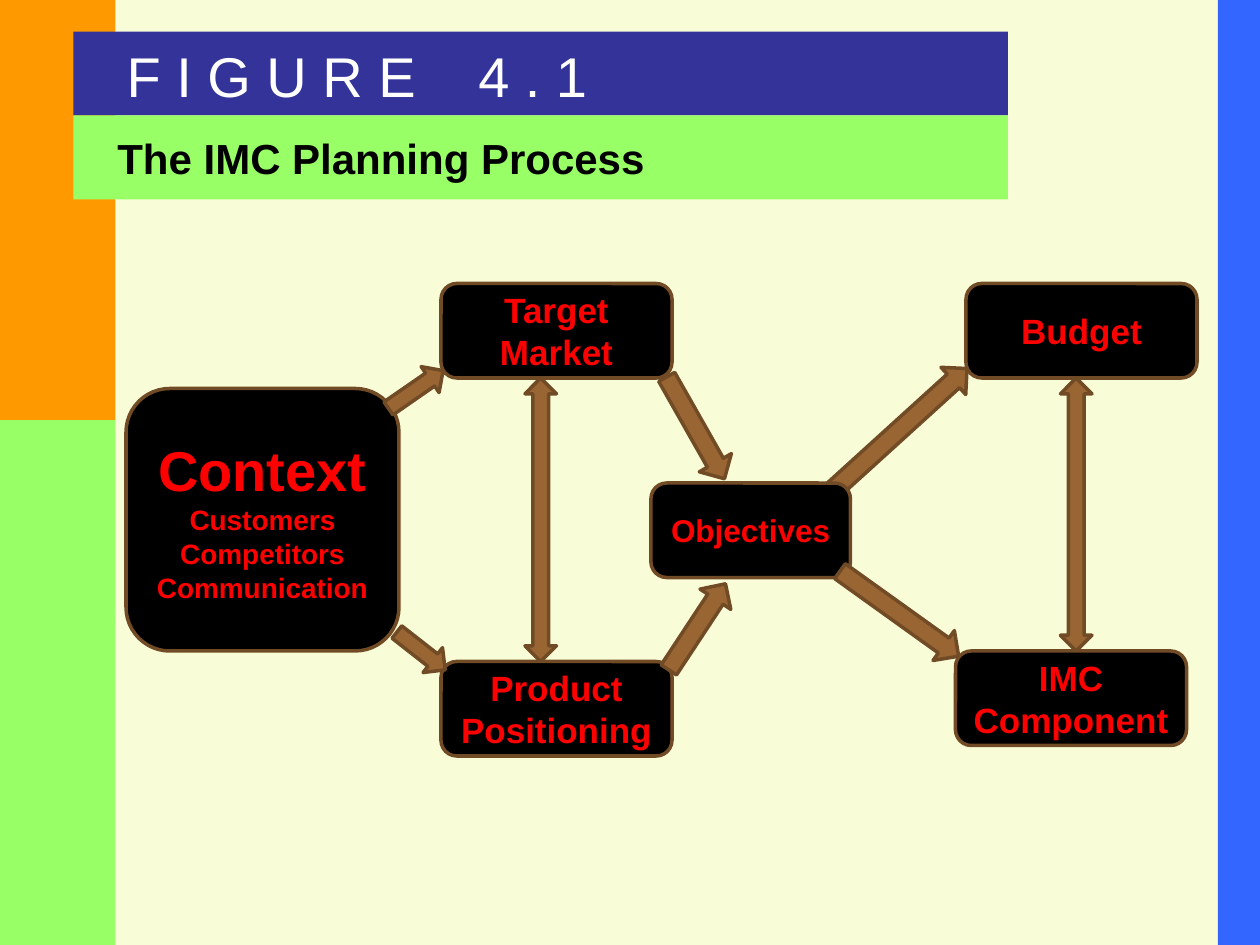
from math import atan2, degrees, hypot
from typing import NamedTuple

from pptx import Presentation
from pptx.dml.color import RGBColor
from pptx.enum.shapes import MSO_SHAPE
from pptx.enum.text import MSO_ANCHOR, PP_ALIGN
from pptx.util import Inches, Pt

COLUMNS, ROWS = 120, 90
WIDTH, HEIGHT = Inches(10), Inches(7.5)
CELL = WIDTH / COLUMNS
GREEN, WHITE, BLACK, RED = "99FF66", "FFFFFF", "000000", "FF0000"
BROWN, DARK_BROWN = "996633", "714B26"


class Area(NamedTuple):
    """A rectangle in columns and rows of the grid."""

    column: float
    row: float
    columns: float
    rows: float


class Line(NamedTuple):
    """One line of text and its size in points."""

    text: str
    size: int


class Stage(NamedTuple):
    """A stage of the planning process."""

    area: Area
    lines: list[Line]


class Arrow(NamedTuple):
    """A block arrow from a start to an end on the grid."""

    start: tuple[float, float]
    end: tuple[float, float]
    thickness: float = 3.5
    kind: MSO_SHAPE = MSO_SHAPE.RIGHT_ARROW


BANDS = [
    (Area(116, 0, 4, ROWS), "3366FF"),
    (Area(0, 0, 11, 40), "FF9900"),
    (Area(0, 40, 11, 50), GREEN),
    (Area(7, 3, 89, 8), "333399"),
    (Area(7, 11, 89, 8), GREEN),
]
OUTER_STAGES = [
    Stage(Area(12, 37, 26, 25), [Line("Context", 32), Line("Customers", 16),
                                 Line("Competitors", 16), Line("Communication", 16)]),
    Stage(Area(92, 27, 22, 9), [Line("Budget", 20)]),
    Stage(Area(42, 27, 22, 9), [Line("Target", 20), Line("Market", 20)]),
    Stage(Area(42, 63, 22, 9), [Line("Product", 20), Line("Positioning", 20)]),
    Stage(Area(91, 62, 22, 9), [Line("IMC", 20), Line("Component", 20)]),
]
OBJECTIVES = Stage(Area(62, 46, 19, 9), [Line("Objectives", 18)])
ARROWS_BEHIND_OBJECTIVES = [
    Arrow((63.7, 63.8), (69.1, 55.6)),
    Arrow((79.1, 46.9), (92.1, 35.1)),
    Arrow((37.8, 60.2), (42.4, 63.8), 3),
    Arrow((37, 38.9), (42.2, 35.3), 3),
]
ARROWS_IN_FRONT = [
    Arrow((63.5, 35.9), (69, 45.6)),
    Arrow((80, 54.4), (91.3, 62.5)),
    Arrow((51.5, 63), (51.5, 36), 3, MSO_SHAPE.LEFT_RIGHT_ARROW),
    Arrow((102.5, 62), (102.5, 36), 3, MSO_SHAPE.LEFT_RIGHT_ARROW),
]


def rgb(value: str) -> RGBColor:
    """Turn a hex string into a colour."""
    return RGBColor.from_string(value)


def place(area: Area) -> list[int]:
    """Turn a grid area into slide lengths."""
    return [round(cells * CELL) for cells in area]


def draw_shape(slide, kind: MSO_SHAPE, area: Area, fill: str, outline: str | None = None):
    """Draw a filled shape, outlined on request."""
    shape = slide.shapes.add_shape(kind, *place(area))
    shape.shadow.inherit = False
    shape.fill.solid()
    shape.fill.fore_color.rgb = rgb(fill)
    if outline:
        shape.line.color.rgb = rgb(outline)
        shape.line.width = Pt(2)
    else:
        shape.line.fill.background()
    return shape


def add_run(paragraph, text: str, *, size: int, color: str, bold: bool = False,
            spacing: int = 0) -> None:
    """Add formatted text, with letter spacing in hundredths of a point."""
    run = paragraph.add_run()
    run.text = text
    font = run.font
    font.name, font.size, font.bold = "Arial", Pt(size), bold
    font.color.rgb = rgb(color)
    if spacing:
        font._element.set("spc", str(spacing))


def draw_figure_number(slide) -> None:
    """Draw the figure number with a wide gap after its first word."""
    label = slide.shapes.add_textbox(*place(Area(9, 3.4, 50, 7.5)))
    label.text_frame.word_wrap = True
    paragraph = label.text_frame.paragraphs[0]
    paragraph.alignment = PP_ALIGN.CENTER
    for text, spacing in (("F I G U R E", 0), (" ", 2650), ("4 . 1", 0)):
        add_run(paragraph, text, size=32, color=WHITE, spacing=spacing)


def draw_title(slide) -> None:
    """Draw the title of the figure."""
    label = slide.shapes.add_textbox(*place(Area(10, 12, 84, 6)))
    label.text_frame.word_wrap = True
    label.text_frame.vertical_anchor = MSO_ANCHOR.MIDDLE
    add_run(label.text_frame.paragraphs[0], "The IMC Planning Process",
            size=24, color=BLACK, bold=True)


def draw_stage(slide, stage: Stage) -> None:
    """Draw a stage as a rounded box with its lines."""
    box = draw_shape(slide, MSO_SHAPE.ROUNDED_RECTANGLE, stage.area, BLACK, DARK_BROWN)
    frame = box.text_frame
    frame.word_wrap = False
    frame.vertical_anchor = MSO_ANCHOR.MIDDLE
    for index, line in enumerate(stage.lines):
        paragraph = frame.add_paragraph() if index else frame.paragraphs[0]
        paragraph.alignment = PP_ALIGN.CENTER
        add_run(paragraph, line.text, size=line.size, color=RED, bold=True)


def draw_arrow(slide, arrow: Arrow) -> None:
    """Draw a block arrow turned to run from its start to its end."""
    (x1, y1), (x2, y2) = arrow.start, arrow.end
    length = hypot(x2 - x1, y2 - y1)
    area = Area((x1 + x2 - length) / 2, (y1 + y2 - arrow.thickness) / 2,
                length, arrow.thickness)
    shape = draw_shape(slide, arrow.kind, area, BROWN, DARK_BROWN)
    shape.rotation = degrees(atan2(y2 - y1, x2 - x1)) % 360


def main() -> None:
    """Build the slide and save it."""
    deck = Presentation()
    deck.slide_width, deck.slide_height = WIDTH, HEIGHT
    slide = deck.slides.add_slide(deck.slide_layouts[6])
    slide.background.fill.solid()
    slide.background.fill.fore_color.rgb = rgb("F9FDD7")

    for area, fill in BANDS:
        draw_shape(slide, MSO_SHAPE.RECTANGLE, area, fill)
    draw_figure_number(slide)
    draw_title(slide)
    for stage in OUTER_STAGES:
        draw_stage(slide, stage)
    for arrow in ARROWS_BEHIND_OBJECTIVES:
        draw_arrow(slide, arrow)
    draw_stage(slide, OBJECTIVES)
    for arrow in ARROWS_IN_FRONT:
        draw_arrow(slide, arrow)
    deck.save("out.pptx")


if __name__ == "__main__":
    main()
